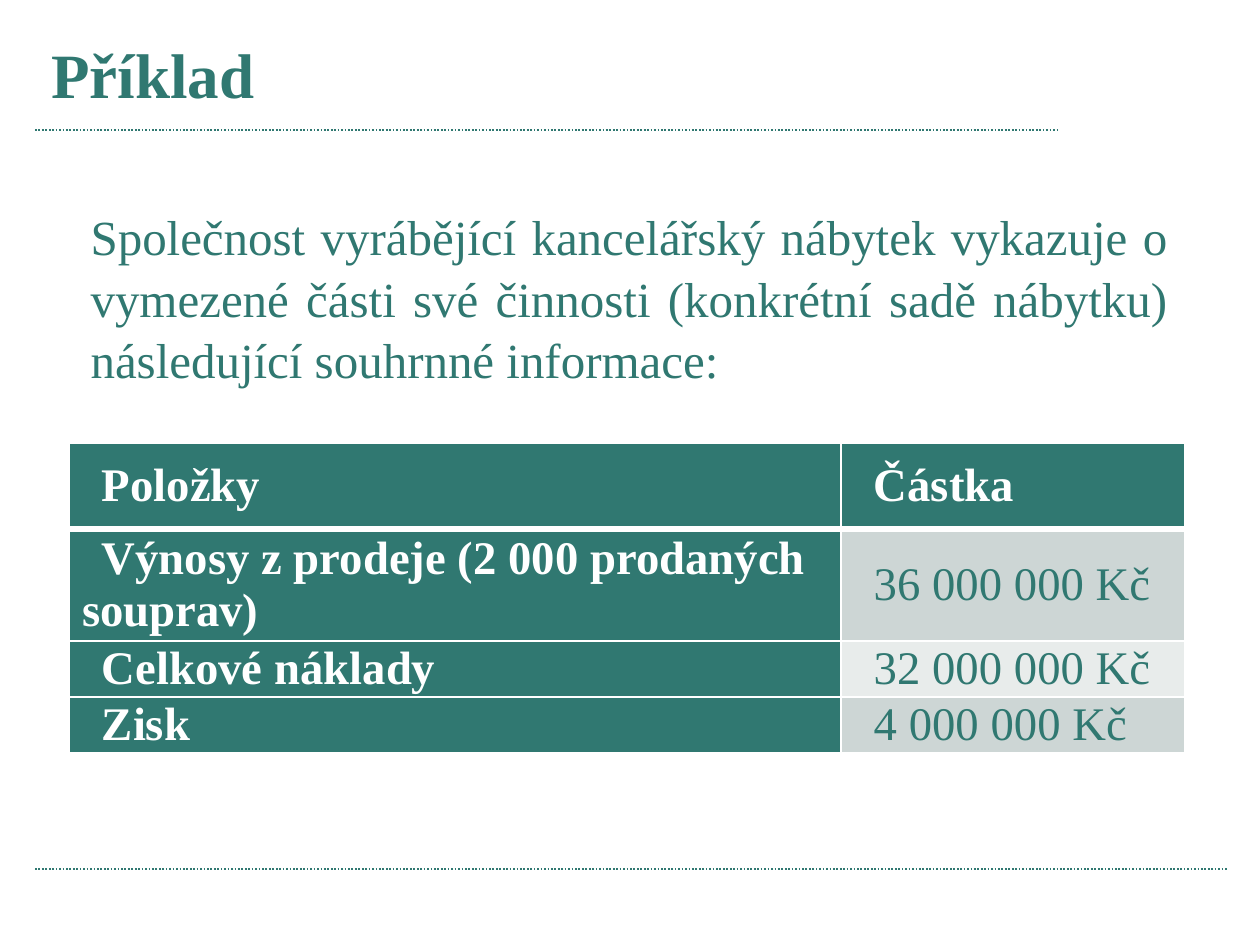
import pptx
import pptx.util
import pptx.dml.color
import pptx.enum.dml
import pptx.enum.shapes
import pptx.enum.text
import pptx.oxml.ns
from lxml import etree
from pptx.util import Cm

THEME = {
    "font": "Times New Roman",
    "green": "307871", "white": "FFFFFF",
    "bands": ["CDD6D5", "E8ECEB"],
    "title": 27, "body": 21, "cell": 20,
}
ALIGN = pptx.enum.text.PP_ALIGN
MIDDLE = pptx.enum.text.MSO_ANCHOR.MIDDLE
qn = pptx.oxml.ns.qn


def rgb(value):
    return pptx.dml.color.RGBColor.from_string(value)


def write(tf, text, size, color=THEME["green"], bold=False,
          align=ALIGN.LEFT, spacing=None, indent=None):
    tf.word_wrap = True
    p = tf.paragraphs[0]
    p.alignment = align
    p.line_spacing = spacing
    if indent is not None:
        p._p.get_or_add_pPr().set("marL", "0")
        p._p.get_or_add_pPr().set("indent", str(indent))
    r = p.add_run()
    r.text = text
    r.font.name = THEME["font"]
    r.font.size = pptx.util.Pt(size)
    r.font.bold = bold
    r.font.color.rgb = rgb(color)


prs = pptx.Presentation()
prs.slide_width, prs.slide_height = Cm(19.05), Cm(14.28)
s = prs.slides.add_slide(prs.slide_layouts[6])

for y, right in [(1.96, 15.98), (13.13, 18.56)]:
    line = s.shapes.add_connector(
        pptx.enum.shapes.MSO_CONNECTOR.STRAIGHT, Cm(0.53), Cm(y), Cm(right), Cm(y))
    line.line.color.rgb = rgb(THEME["green"])
    line.line.width = pptx.util.Pt(0.75)
    line.line.dash_style = pptx.enum.dml.MSO_LINE.ROUND_DOT
    etree.SubElement(line._element.spPr, qn("a:effectLst"))

title = s.shapes.add_textbox(Cm(0.53), Cm(0.36), Cm(16.8), Cm(1.5))
title.text_frame.vertical_anchor = MIDDLE
write(title.text_frame, "Příklad", THEME["title"], bold=True)

body = s.shapes.add_textbox(Cm(1.12), Cm(2.95), Cm(16.8), Cm(4.42))
write(body.text_frame,
      "Společnost vyrábějící kancelářský nábytek vykazuje o vymezené části své "
      "činnosti (konkrétní sadě nábytku) následující souhrnné informace:",
      THEME["body"], align=ALIGN.JUSTIFY, spacing=1.05)

rows = [
    ("Položky", "Částka"),
    ("Výnosy z prodeje (2 000 prodaných souprav)", "36 000 000 Kč"),
    ("Celkové náklady", "32 000 000 Kč"),
    ("Zisk", "4 000 000 Kč"),
]
widths = [11.67, 5.2]
heights = [1.3, 1.68, 0.84, 0.84]
table = s.shapes.add_table(len(rows), len(widths), Cm(1.05), Cm(6.69),
                           Cm(sum(widths)), Cm(sum(heights))).table
for col, width in zip(table.columns, widths):
    col.width = Cm(width)
for row, height in zip(table.rows, heights):
    row.height = Cm(height)

for i, row in enumerate(rows):
    for j, text in enumerate(row):
        cell = table.cell(i, j)
        heading = i == 0 or j == 0
        cell.vertical_anchor = MIDDLE
        cell.margin_left = cell.margin_right = Cm(0.19)
        cell.margin_top = cell.margin_bottom = 0
        write(cell.text_frame, text, THEME["cell"], bold=heading, indent=Cm(0.3),
              color=THEME["white"] if heading else THEME["green"])
        tcPr = cell._tc.get_or_add_tcPr()
        for side in "LRTB":
            thick = (i == 0 and side == "B") or (i == 1 and side == "T")
            ln = etree.SubElement(tcPr, qn("a:ln" + side),
                                  w=str(pptx.util.Pt(3 if thick else 1)))
            fill = etree.SubElement(ln, qn("a:solidFill"))
            etree.SubElement(fill, qn("a:srgbClr"), val=THEME["white"])
        cell.fill.solid()
        cell.fill.fore_color.rgb = rgb(
            THEME["green"] if heading else THEME["bands"][(i - 1) % 2])

prs.save("out.pptx")
